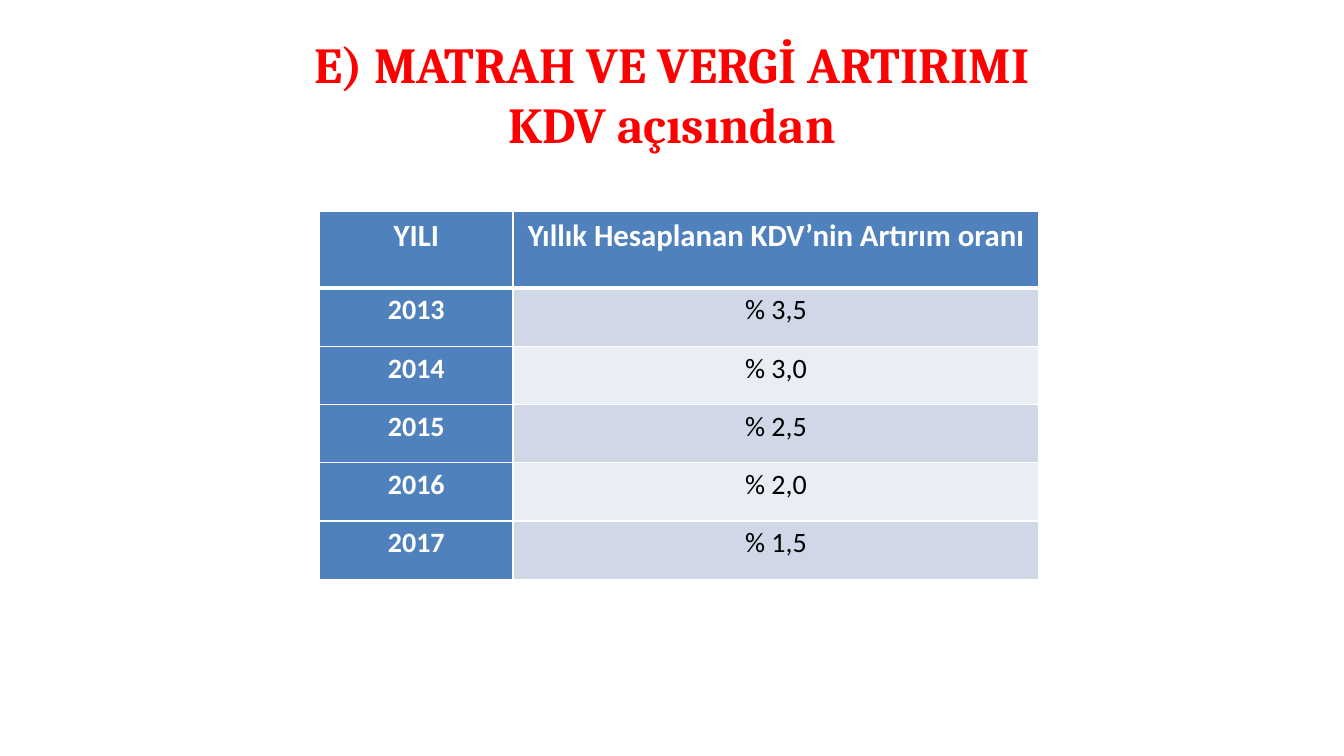
from lxml import etree
from pptx import Presentation
from pptx.dml.color import RGBColor
from pptx.enum import text
from pptx.oxml.ns import qn
from pptx.util import Pt

COLORS = {
    "title": "FF0000",
    "head": "4F81BD",
    "odd": "D0D8E8",
    "even": "E9EDF4",
    "light": "FFFFFF",
    "dark": "000000",
}


def color(name):
    return RGBColor.from_string(COLORS[name])


class Page:
    """Holds the style and the current slide."""

    title_font = "Cambria"
    body_font = "Calibri"

    def __init__(self, deck):
        self.slide = deck.slides.add_slide(deck.slide_layouts[6])

    def style(self, para, font, size, ink, bold):
        para.alignment = text.PP_ALIGN.CENTER
        para.font.name = font
        para.font.size = Pt(size)
        para.font.bold = bold
        para.font.color.rgb = color(ink)

    def title(self, words, left, top, width, height):
        box = self.slide.shapes.add_textbox(Pt(left), Pt(top), Pt(width), Pt(height))
        frame = box.text_frame
        frame.word_wrap = True
        frame.vertical_anchor = text.MSO_ANCHOR.MIDDLE
        para = frame.paragraphs[0]
        para.text = words
        self.style(para, self.title_font, 36, "title", True)

    def border(self, cell, widths):
        props = cell._tc.get_or_add_tcPr()
        for spot, (side, width) in enumerate(widths.items()):
            line = etree.Element(qn("a:ln" + side), w=str(Pt(width)))
            fill = etree.SubElement(line, qn("a:solidFill"))
            etree.SubElement(fill, qn("a:srgbClr"), val=COLORS["light"])
            props.insert(spot, line)

    def cell(self, cell, words, size, fill, ink, bold):
        cell.margin_left = cell.margin_right = Pt(5)
        cell.margin_top = cell.margin_bottom = 0
        cell.fill.solid()
        cell.fill.fore_color.rgb = color(fill)
        para = cell.text_frame.paragraphs[0]
        para.text = words
        para.line_spacing = 1.15
        para.space_after = Pt(11.2)
        self.style(para, self.body_font, size, ink, bold)

    def table(self, rows, left, top, widths, heights):
        grid = self.slide.shapes.add_table(
            len(rows), len(widths), Pt(left), Pt(top),
            Pt(sum(widths)), Pt(sum(heights))).table
        for col, width in zip(grid.columns, widths):
            col.width = Pt(width)
        for row, height in zip(grid.rows, heights):
            row.height = Pt(height)
        for r, row in enumerate(rows):
            for c, words in enumerate(row):
                cell = grid.cell(r, c)
                head = r == 0 or c == 0
                fill = "head" if head else "odd" if r % 2 else "even"
                self.cell(cell, words, 20 if r else 22, fill,
                          "light" if head else "dark", head)
                # Thick rule between the header and the first year
                self.border(cell, {"L": 1, "R": 1,
                                   "T": 3 if r == 1 else 1,
                                   "B": 3 if r == 0 else 1})


def main():
    deck = Presentation()
    deck.slide_width, deck.slide_height = Pt(960), Pt(540)
    page = Page(deck)

    # Title
    page.title("E) MATRAH VE VERGİ ARTIRIMI\vKDV açısından", 48, 21.6, 864, 90)

    # Rates by year
    rates = [
        ("YILI", "Yıllık Hesaplanan KDV’nin Artırım oranı"),
        ("2013", "% 3,5"),
        ("2014", "% 3,0"),
        ("2015", "% 2,5"),
        ("2016", "% 2,0"),
        ("2017", "% 1,5"),
    ]
    page.table(rates, 228.4, 151.2, [138, 375.8], [54.6] + [41.6] * 5)

    deck.save("out.pptx")


if __name__ == "__main__":
    main()
